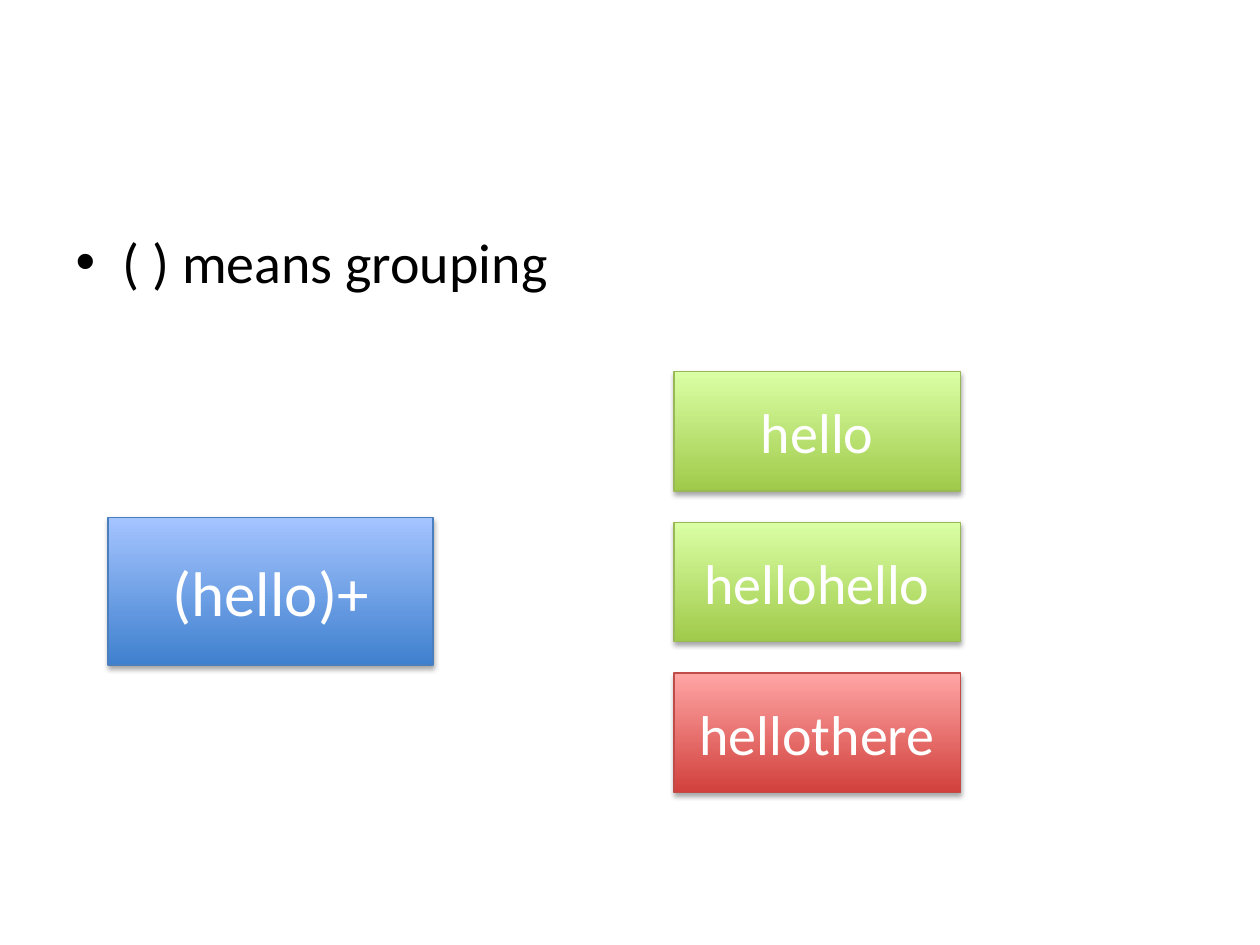
"""Build a slide on grouping in regular expressions."""
from lxml import etree
from pptx import Presentation
from pptx.dml.color import RGBColor
from pptx.enum.shapes import MSO_SHAPE
from pptx.enum.text import MSO_ANCHOR, PP_ALIGN
from pptx.oxml.ns import qn
from pptx.util import Cm, Pt

RECT = MSO_SHAPE.RECTANGLE
MIDDLE = MSO_ANCHOR.MIDDLE
CENTER = PP_ALIGN.CENTER

POINT = "( ) means grouping"
PATTERN = "(hello)+"
SAMPLES = [("hello", "match"), ("hellohello", "match"), ("hellothere", "miss")]

THEME = {
    "font": "Calibri",
    "ink": "000000",
    "light": "FFFFFF",
    "body": 32,
    "large": 36,
    "line": 0.75,
    "pattern": ("3F80CE", "A4C4FF", "4B7EBC"),
    "match": ("A0CA4A", "DAFFA5", "98B955"),
    "miss": ("D1403C", "FFA6A5", "BF4C48"),
    "shadow": {"blurRad": Pt(3.1), "dist": Pt(1.8), "dir": 5400000, "rotWithShape": 0},
}

BODY = (1.27, 4.45, 22.86, 12.57)
SOURCE = (2.18, 10.44, 6.55, 2.97)
LEFT, TOP, WIDTH, HEIGHT = 13.59, 7.49, 5.77, 2.41
PITCH = 3.04


def add_run(para, text, size, color):
    run = para.add_run()
    run.text = text
    run.font.name = THEME["font"]
    run.font.size = Pt(size)
    run.font.color.rgb = RGBColor.from_string(color)


def add_shadow(shape):
    shape.shadow.inherit = False
    effects = shape._element.spPr.find(qn("a:effectLst"))
    attrs = {key: str(int(value)) for key, value in THEME["shadow"].items()}
    outer = etree.SubElement(effects, qn("a:outerShdw"), attrs)
    color = etree.SubElement(outer, qn("a:srgbClr"), val=THEME["ink"])
    etree.SubElement(color, qn("a:alpha"), val="35000")


def add_box(slide, text, place, kind, size):
    low, high, edge = THEME[kind]
    box = slide.shapes.add_shape(RECT, *map(Cm, place))
    box.fill.gradient()
    box.fill.gradient_angle = 90
    for stop, color, spot in zip(box.fill.gradient_stops, (low, high), (0, 1)):
        stop.color.rgb = RGBColor.from_string(color)
        stop.position = spot
    box.line.color.rgb = RGBColor.from_string(edge)
    box.line.width = Pt(THEME["line"])
    add_shadow(box)
    frame = box.text_frame
    frame.word_wrap = True
    frame.vertical_anchor = MIDDLE
    para = frame.paragraphs[0]
    para.alignment = CENTER
    add_run(para, text, size, THEME["light"])


def main():
    deck = Presentation()
    deck.slide_width, deck.slide_height = Cm(25.4), Cm(19.05)
    slide = deck.slides.add_slide(deck.slide_layouts[1])
    title = slide.shapes.title._element
    title.getparent().remove(title)
    body = slide.placeholders[1]
    body.left, body.top, body.width, body.height = map(Cm, BODY)
    add_run(body.text_frame.paragraphs[0], POINT, THEME["body"], THEME["ink"])

    add_box(slide, PATTERN, SOURCE, "pattern", THEME["large"])
    for row, (text, kind) in enumerate(SAMPLES):
        place = (LEFT, TOP + row * PITCH, WIDTH, HEIGHT)
        add_box(slide, text, place, kind, THEME["body"])
    deck.save("out.pptx")


if __name__ == "__main__":
    main()
